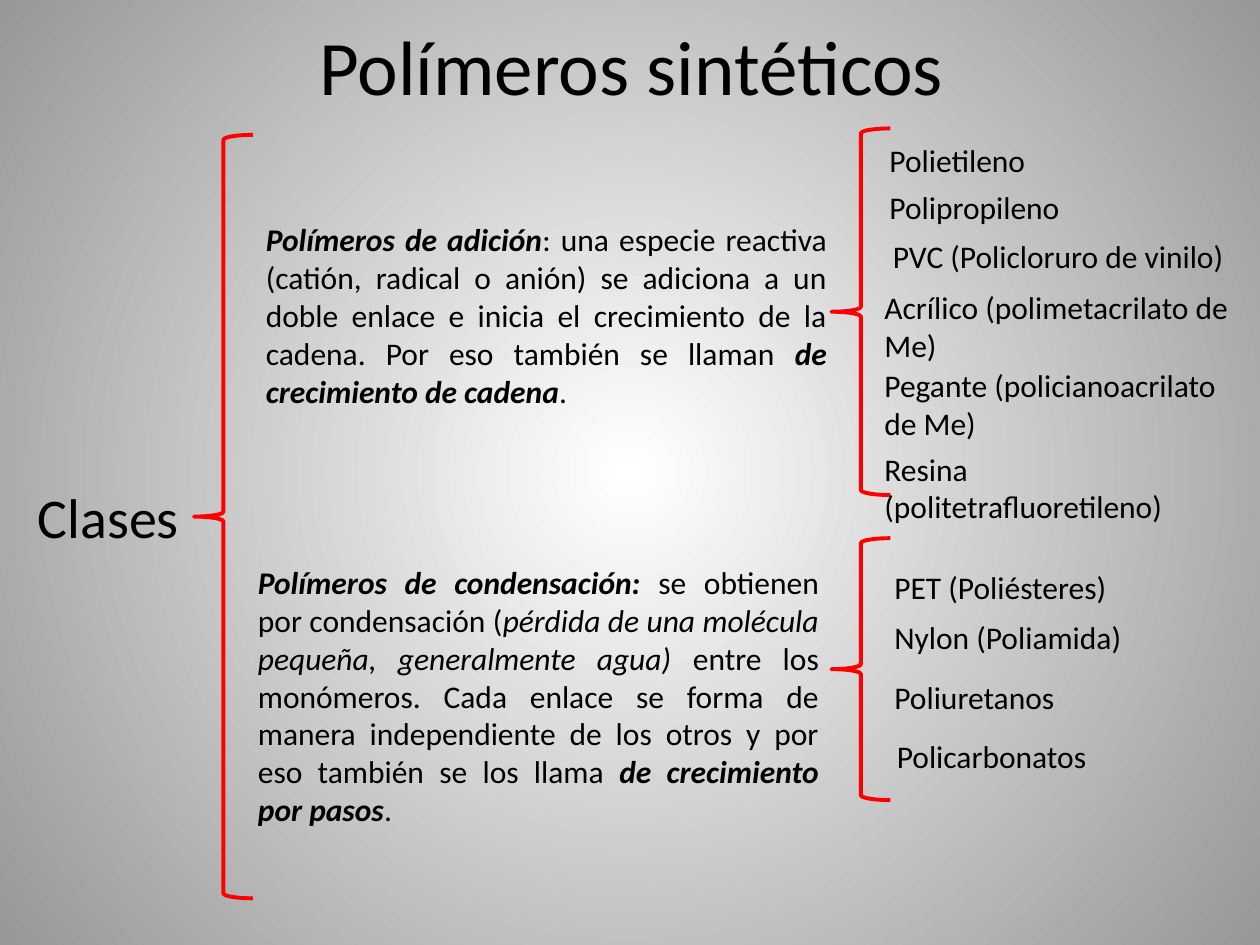
from lxml.etree import SubElement
from pptx import Presentation
from pptx.dml.color import RGBColor
from pptx.enum.shapes import MSO_SHAPE
from pptx.enum.text import MSO_ANCHOR, MSO_AUTO_SIZE, PP_ALIGN
from pptx.oxml.ns import qn
from pptx.util import Cm, Pt

COLORS = {"text": "000000", "brace": "FF0000", "center": "FFFFFF", "edge": "979797"}
FONT = "Calibri"


def rgb(name):
    return RGBColor.from_string(COLORS[name])


def add_text(box, runs, size=18, align=PP_ALIGN.LEFT, wrap=False):
    """Add a text box; runs are (text, style) pairs, style holding b and/or i."""
    shape = slide.shapes.add_textbox(*map(Cm, box))
    frame = shape.text_frame
    frame.word_wrap = wrap
    frame.auto_size = MSO_AUTO_SIZE.SHAPE_TO_FIT_TEXT
    para = frame.paragraphs[0]
    para.alignment = align
    para.font.name = FONT
    para.font.size = Pt(size)
    para.font.color.rgb = rgb("text")
    for text, style in runs:
        run = para.add_run()
        run.text = text
        if style:
            run.font.bold = "b" in style
            run.font.italic = "i" in style
    return frame


prs = Presentation()
prs.slide_width, prs.slide_height = Cm(25.4), Cm(19.05)
slide = prs.slides.add_slide(prs.slide_layouts[6])

# Radial background
fill = slide.background.fill
fill.gradient()
for stop, name in zip(fill.gradient_stops, ("center", "edge")):
    stop.color.rgb = rgb(name)
grad = slide.element.find(".//" + qn("a:gradFill"))
grad.remove(grad.find(qn("a:lin")))
radial = SubElement(grad, qn("a:path"), {"path": "circle"})
SubElement(radial, qn("a:fillToRect"), dict.fromkeys("ltrb", "50000"))

# Title and root of the tree
title = add_text((1.3, 0.03, 22.86, 2.57), [("Polímeros sintéticos", "")],
                 44, PP_ALIGN.CENTER, True)
title.auto_size = MSO_AUTO_SIZE.NONE
title.vertical_anchor = MSO_ANCHOR.MIDDLE
add_text((0.51, 9.6, 3.38, 1.63), [("Clases", "")], 32)

# Braces: left, top, height
for left, top, height in ((3.91, 2.72, 15.39), (16.76, 2.59, 7.39), (16.76, 10.85, 5.28)):
    brace = slide.shapes.add_shape(MSO_SHAPE.LEFT_BRACE, Cm(left), Cm(top), Cm(1.19), Cm(height))
    brace.shadow.inherit = False
    brace.fill.background()
    brace.line.color.rgb = rgb("brace")
    brace.line.width = Pt(2.25)

# Definitions of the two classes
addition = [
    ("Polímeros de adición", "bi"),
    (": una especie reactiva (catión, radical o anión) se adiciona a un doble enlace "
     "e inicia el crecimiento de la cadena. Por eso también se llaman ", ""),
    ("de crecimiento de cadena", "bi"),
    (".", ""),
]
condensation = [
    ("Polímeros de condensación: ", "bi"),
    ("se obtienen por condensación (", ""),
    ("pérdida de una molécula pequeña, generalmente agua) ", "i"),
    ("entre los monómeros. Cada enlace se forma de manera independiente de los otros "
     "y por eso también se los llama ", ""),
    ("de crecimiento por pasos", "bi"),
    (".", ""),
]
add_text((5.11, 4.32, 11.81, 4.11), addition, align=PP_ALIGN.JUSTIFY, wrap=True)
add_text((4.95, 11.23, 11.81, 5.64), condensation, align=PP_ALIGN.JUSTIFY, wrap=True)

# Examples: text, left, top, width, lines
examples = [
    ("Polietileno", 17.68, 2.72, 3.28, 1),
    ("Polipropileno", 17.68, 3.66, 3.99, 1),
    ("PVC (Policloruro de vinilo)", 17.75, 4.65, 7.26, 1),
    ("Acrílico (polimetacrilato de Me)", 17.58, 5.69, 7.82, 2),
    ("Pegante (policianoacrilato de Me)", 17.58, 7.26, 7.44, 2),
    ("Resina (politetrafluoretileno)", 17.58, 8.94, 7.92, 1),
    ("PET (Poliésteres)", 17.78, 11.33, 4.83, 1),
    ("Nylon (Poliamida)", 17.78, 12.34, 5.13, 1),
    ("Poliuretanos", 17.78, 13.54, 3.76, 1),
    ("Policarbonatos", 17.83, 14.73, 4.37, 1),
]
for text, left, top, width, lines in examples:
    add_text((left, top, width, 0.25 + 0.77 * lines), [(text, "")], wrap=lines > 1)

prs.save("out.pptx")
